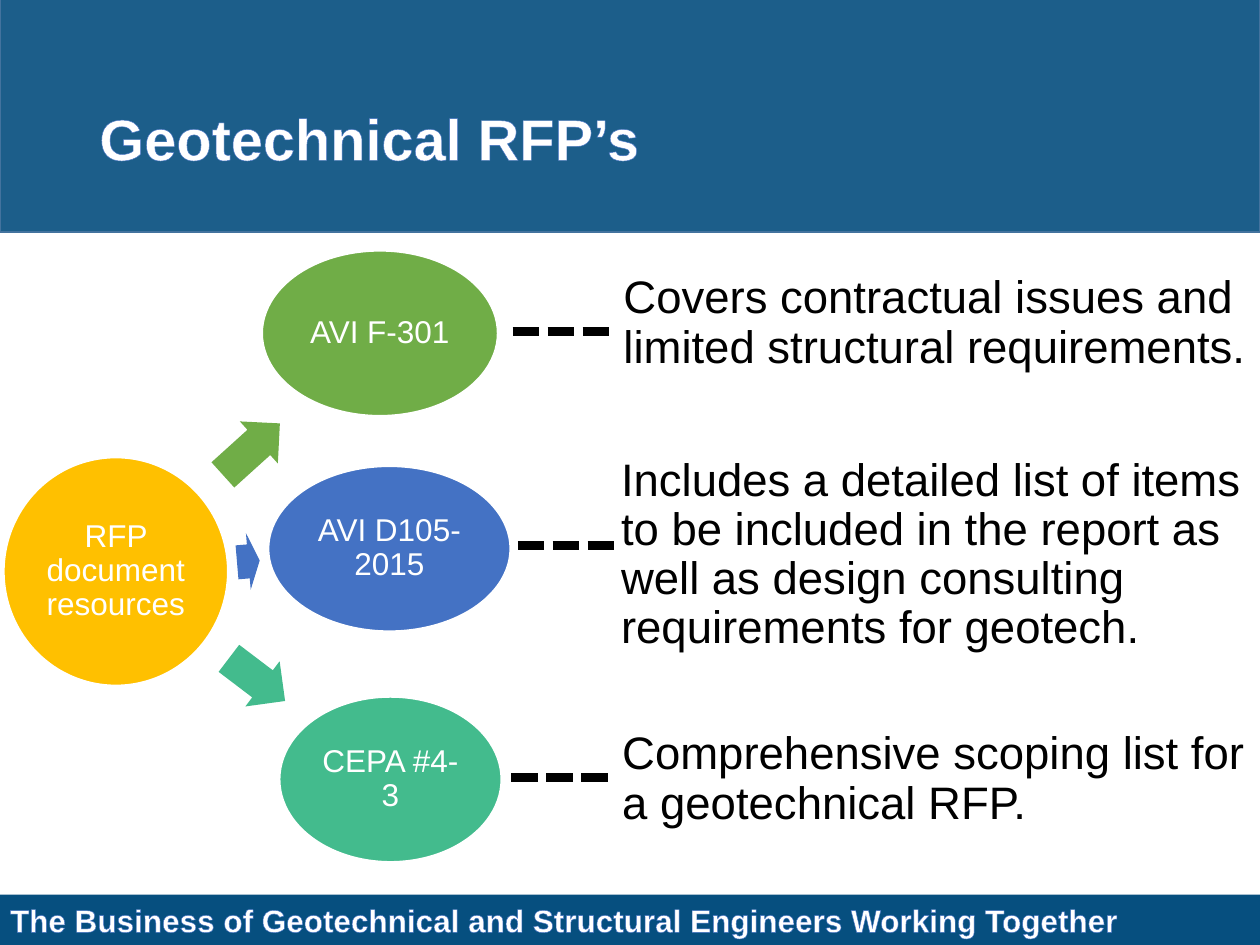
from lxml.etree import SubElement
from pptx import Presentation
from pptx.dml.color import RGBColor
from pptx.enum.dml import MSO_LINE
from pptx.enum.shapes import MSO_CONNECTOR, MSO_SHAPE
from pptx.enum.text import MSO_ANCHOR, PP_ALIGN
from pptx.oxml.ns import qn
from pptx.util import Pt

NAVY = RGBColor(0x06, 0x4F, 0x7F)
BORDER = RGBColor(0x43, 0x73, 0x9E)
BLUE = RGBColor(0x44, 0x72, 0xC4)
GREEN = RGBColor(0x70, 0xAD, 0x47)
TEAL = RGBColor(0x43, 0xBB, 0x8D)
GOLD = RGBColor(0xFF, 0xC0, 0x00)
WHITE = RGBColor(0xFF, 0xFF, 0xFF)
BLACK = RGBColor(0, 0, 0)

# Content; boxes are left, top, width, height in points
TITLE = "Geotechnical RFP’s"
FOOTER = "The Business of Geotechnical and Structural Engineers Working Together"
HUB = ("RFP document resources", (2.2, 261.4, 128, 130.3))
RESOURCES = [
    dict(name="AVI F-301", color=GREEN, oval=(149.8, 143.3, 134.6, 94.3),
         arrow=(121.7, 240.5, 43.9, 32.4), angle=317.9, dash=(293, 189.4),
         note="Covers contractual issues and limited structural requirements.",
         note_box=(349.2, 153.4, 372.2, 72)),
    dict(name="AVI D105-2015", color=BLUE, oval=(153.4, 266.4, 138.2, 94.3),
         arrow=(135.4, 304.6, 13, 32.4), angle=355.2, dash=(295.9, 311.8),
         note="Includes a detailed list of items to be included in the report "
              "as well as design consulting requirements for geotech.",
         note_box=(347.8, 257.8, 372.2, 131.8)),
    dict(name="CEPA #4-3", color=TEAL, oval=(159.8, 398.2, 126.7, 94.3),
         arrow=(126.7, 372.2, 40.3, 32.4), angle=37.2, dash=(292.3, 444.2),
         note="Comprehensive scoping list for a geotechnical RFP.",
         note_box=(348.5, 414, 372.2, 90)),
]
DASH_LENGTH = 55.8

presentation = Presentation()
presentation.slide_width, presentation.slide_height = Pt(720), Pt(540)
slide = presentation.slides.add_slide(presentation.slide_layouts[6])


def add_shape(kind, box, color, line=None):
    shape = slide.shapes.add_shape(kind, *map(Pt, box))
    shape.shadow.inherit = False
    shape.fill.solid()
    shape.fill.fore_color.rgb = color
    if line is None:
        shape.line.fill.background()
    else:
        shape.line.color.rgb = line
        shape.line.width = Pt(1)
    return shape


def add_textbox(box):
    return slide.shapes.add_textbox(*map(Pt, box))


def write(shape, text, size, color=WHITE, bold=False, align=PP_ALIGN.LEFT,
          anchor=MSO_ANCHOR.MIDDLE, spacing=0.9):
    frame = shape.text_frame
    frame.word_wrap = True
    frame.vertical_anchor = anchor
    paragraph = frame.paragraphs[0]
    paragraph.text = text
    paragraph.alignment = align
    paragraph.line_spacing = spacing
    font = paragraph.font
    font.name, font.size, font.bold = "Arial", Pt(size), bold
    font.color.rgb = color
    return paragraph


def outline_text(paragraph):
    properties = paragraph.runs[0].font._element
    line = SubElement(properties, qn("a:ln"), w=str(Pt(0.8)))
    fill = SubElement(line, qn("a:solidFill"))
    SubElement(fill, qn("a:srgbClr"), val=str(BLUE))


def add_oval(text, box, color):
    oval = add_shape(MSO_SHAPE.OVAL, box, color, WHITE)
    frame = oval.text_frame
    frame.margin_left = frame.margin_right = Pt(2)
    frame.margin_top = frame.margin_bottom = Pt(2)
    write(oval, text, 18, align=PP_ALIGN.CENTER)


# Header and footer bands
header = add_shape(MSO_SHAPE.RECTANGLE, (0, -0.7, 720, 133.2), NAVY, BORDER)
header_color = header.fill._xPr.find(qn("a:solidFill"))[0]
SubElement(header_color, qn("a:alpha"), val="91000")
outline_text(write(add_textbox((49.7, 28.8, 620.6, 104.4)), TITLE, 33, bold=True))
footer = add_shape(MSO_SHAPE.RECTANGLE, (-1.4, 511.2, 721.4, 28.8), NAVY)
outline_text(write(footer, FOOTER, 18, bold=True, spacing=1))

# Hub, with an arrow, an oval, a dashed line and a note for each resource
add_oval(HUB[0], HUB[1], GOLD)
for resource in RESOURCES:
    arrow = add_shape(MSO_SHAPE.RIGHT_ARROW, resource["arrow"], resource["color"])
    arrow.adjustments[0], arrow.adjustments[1] = 0.6, 0.5
    arrow.rotation = resource["angle"]
    add_oval(resource["name"], resource["oval"], resource["color"])

    note = write(add_textbox(resource["note_box"]), resource["note"], 26, BLACK,
                 anchor=MSO_ANCHOR.TOP)
    note.space_before = Pt(7.5)

    x, y = resource["dash"]
    dash = slide.shapes.add_connector(
        MSO_CONNECTOR.STRAIGHT, Pt(x), Pt(y), Pt(x + DASH_LENGTH), Pt(y))
    dash.line.color.rgb = BLACK
    dash.line.width = Pt(5)
    dash.line.dash_style = MSO_LINE.SQUARE_DOT
    dash.line._get_or_add_ln().find(qn("a:prstDash")).set("val", "sysDash")
    SubElement(dash._element.spPr, qn("a:effectLst"))

presentation.save("out.pptx")
